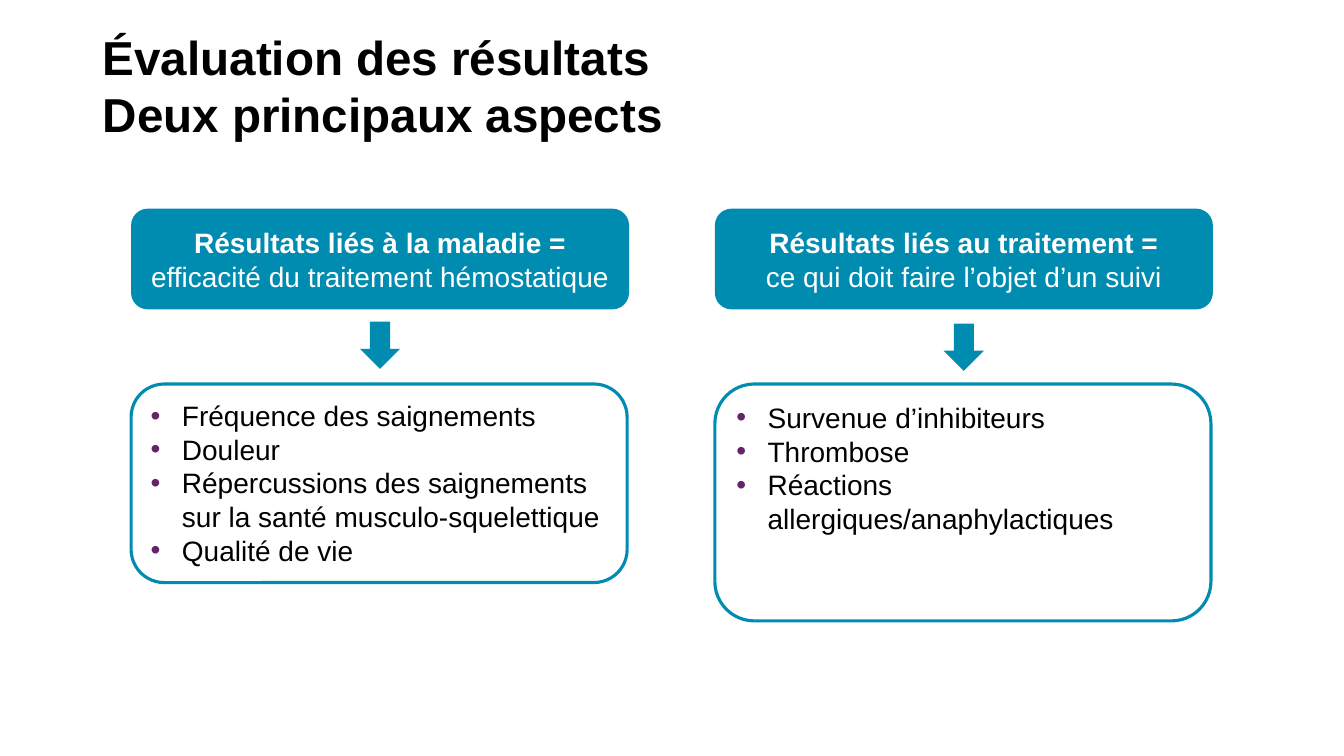
from pptx import Presentation
from pptx.dml.color import RGBColor
from pptx.enum.shapes import MSO_SHAPE
from pptx.enum.text import MSO_ANCHOR, PP_ALIGN
from pptx.oxml.ns import qn
from pptx.util import Inches, Pt
from lxml.etree import SubElement

# Content
TITLE = ["Évaluation des résultats", "Deux principaux aspects"]
ASPECTS = [
    {
        "heading": ["Résultats liés à la maladie =", "efficacité du traitement hémostatique"],
        "outcomes": [
            "Fréquence des saignements",
            "Douleur",
            "Répercussions des saignements sur la santé musculo-squelettique",
            "Qualité de vie",
        ],
        "left": 1.3, "arrow_top": 3.19, "list_height": 1.97,
    },
    {
        "heading": ["Résultats liés au traitement =", "ce qui doit faire l’objet d’un suivi"],
        "outcomes": [
            "Survenue d’inhibiteurs",
            "Thrombose",
            "Réactions allergiques/anaphylactiques",
        ],
        "left": 7.09, "arrow_top": 3.21, "list_height": 2.35,
    },
]

# Format
COLORS = {"teal": "008BB0", "bullet": "642566", "text": "000000", "white": "FFFFFF"}
HEADING_TOP, HEADING_WIDTH, HEADING_HEIGHT = 2.07, 4.94, 1
LIST_TOP, LIST_WIDTH = 3.81, 4.92
ARROW_WIDTH, ARROW_HEIGHT = 0.4, 0.47
INDENT = Inches(0.31)
TITLE_FONT = {"name": "Arial", "size": Pt(34), "bold": True}
HEADING_FONTS = [{"name": "Arial", "size": Pt(20), "bold": bold} for bold in (True, False)]
LIST_FONT = {"name": "Arial", "size": Pt(20), "bold": False}


def rgb(name):
    return RGBColor.from_string(COLORS[name])


def format_font(font, values, color):
    for key, value in values.items():
        setattr(font, key, value)
    font.color.rgb = rgb(color)


def add_part(slide, preset, left, top, width, height, filled=True):
    part = slide.shapes.add_shape(
        preset, Inches(left), Inches(top), Inches(width), Inches(height))
    part.shadow.inherit = False
    if filled:
        part.fill.solid()
        part.fill.fore_color.rgb = rgb("teal")
        part.line.fill.background()
    else:
        part.fill.background()
        part.line.color.rgb = rgb("teal")
        part.line.width = Pt(2.25)
    return part


def add_lines(frame, lines):
    frame.word_wrap = True
    frame.text = "\n".join(lines)
    return frame.paragraphs


def add_bullet(paragraph):
    properties = paragraph._p.get_or_add_pPr()
    properties.set("marL", str(INDENT))
    properties.set("indent", str(-INDENT))
    bullet_color = SubElement(properties, qn("a:buClr"))
    SubElement(bullet_color, qn("a:srgbClr"), val=COLORS["bullet"])
    SubElement(properties, qn("a:buFont"), typeface="Arial")
    SubElement(properties, qn("a:buChar"), char="•")


def add_aspect(slide, aspect):
    left = aspect["left"]
    center = left + HEADING_WIDTH / 2

    # Heading
    heading = add_part(slide, MSO_SHAPE.ROUNDED_RECTANGLE,
                       left, HEADING_TOP, HEADING_WIDTH, HEADING_HEIGHT)
    heading.text_frame.vertical_anchor = MSO_ANCHOR.MIDDLE
    heading_lines = add_lines(heading.text_frame, aspect["heading"])
    for paragraph, values in zip(heading_lines, HEADING_FONTS):
        paragraph.alignment = PP_ALIGN.CENTER
        format_font(paragraph.font, values, "white")

    # Arrow
    add_part(slide, MSO_SHAPE.DOWN_ARROW, center - ARROW_WIDTH / 2,
             aspect["arrow_top"], ARROW_WIDTH, ARROW_HEIGHT)

    # Outcomes
    outcomes = add_part(slide, MSO_SHAPE.ROUNDED_RECTANGLE, left, LIST_TOP,
                        LIST_WIDTH, aspect["list_height"], filled=False)
    outcomes.text_frame.vertical_anchor = MSO_ANCHOR.TOP
    for paragraph in add_lines(outcomes.text_frame, aspect["outcomes"]):
        paragraph.alignment = PP_ALIGN.LEFT
        add_bullet(paragraph)
        format_font(paragraph.font, LIST_FONT, "text")


def main():
    deck = Presentation()
    deck.slide_width, deck.slide_height = Inches(13.33), Inches(7.5)
    slide = deck.slides.add_slide(deck.slide_layouts[5])

    # Title
    title = slide.shapes.title
    title.left, title.top = Inches(0.92), Inches(0.25)
    title.width, title.height = Inches(11.5), Inches(1.19)
    title.text_frame.vertical_anchor = MSO_ANCHOR.MIDDLE
    title.text_frame.word_wrap = True
    heading = title.text_frame.paragraphs[0]
    heading.text = "\v".join(TITLE)
    heading.alignment = PP_ALIGN.LEFT
    format_font(heading.font, TITLE_FONT, "text")

    # Aspects
    for aspect in ASPECTS:
        add_aspect(slide, aspect)

    deck.save("out.pptx")


if __name__ == "__main__":
    main()
